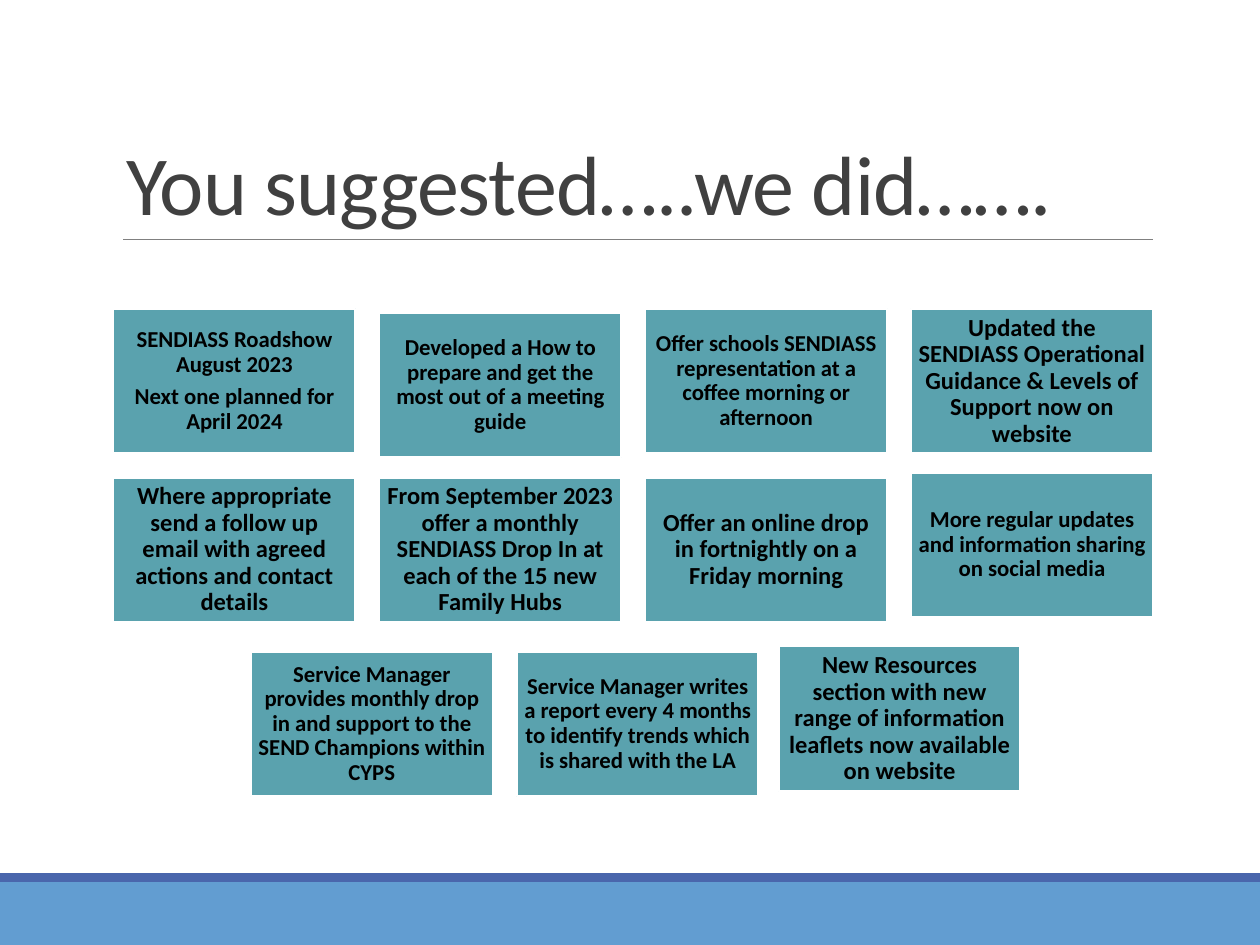
from dataclasses import dataclass

from lxml.etree import SubElement
from pptx import Presentation
from pptx.dml.color import RGBColor
from pptx.enum.shapes import MSO_CONNECTOR, MSO_SHAPE
from pptx.enum.text import MSO_ANCHOR, MSO_AUTO_SIZE, PP_ALIGN
from pptx.oxml.ns import qn
from pptx.util import Inches, Pt


@dataclass(frozen=True)
class Theme:
    font: str = "Calibri"
    title: str = "404040"
    text: str = "000000"
    card: str = "5AA2AE"
    edge: str = "FFFFFF"
    rule: str = "808080"
    band: str = "629DD1"
    stripe: str = "4A66AC"
    title_size: int = 48
    small: int = 13
    large: int = 14


THEME = Theme()
CARD_W, CARD_H = 1.92, 1.15
STEP_X, STEP_Y = 2.11, 1.34
TOP = 2.45

ROWS = [
    (0.9, [
        ("SENDIASS Roadshow August 2023\nNext one planned for April 2024", THEME.small, 0, 0),
        ("Developed a How to prepare and get the most out of a meeting guide", THEME.small, 0, 0.03),
        ("Offer schools SENDIASS representation at a coffee morning or afternoon", THEME.small, 0, 0),
        ("Updated the SENDIASS Operational Guidance & Levels of Support now on website", THEME.large, 0, 0),
    ]),
    (0.9, [
        ("Where appropriate send a follow up email with agreed actions and contact details", THEME.large, 0, 0),
        ("From September 2023 offer a monthly SENDIASS Drop In at each of the 15 new Family Hubs",
         THEME.large, 0, 0),
        ("Offer an online drop in fortnightly on a Friday morning", THEME.large, 0, 0),
        ("More regular updates and information sharing on social media", THEME.small, 0, -0.04),
    ]),
    (1.99, [
        ("Service Manager provides monthly drop in and support to the SEND Champions within CYPS",
         THEME.small, 0, 0.04),
        ("Service Manager writes a report every 4 months to identify trends which is shared with the LA",
         THEME.small, 0, 0.04),
        ("New Resources section with new range of information leaflets now available on website",
         THEME.large, -0.03, 0),
    ]),
]


def rgb(value):
    return RGBColor.from_string(value)


def style_font(font, size, color, bold=False):
    font.name = THEME.font
    font.size = Pt(size)
    font.bold = bold
    font.color.rgb = rgb(color)


def add_rect(slide, left, top, width, height, fill):
    sp = slide.shapes.add_shape(MSO_SHAPE.RECTANGLE, Inches(left), Inches(top), Inches(width), Inches(height))
    sp.shadow.inherit = False
    sp.fill.solid()
    sp.fill.fore_color.rgb = rgb(fill)
    sp.line.fill.background()
    return sp


def add_rule(slide, left, right, top):
    line = slide.shapes.add_connector(
        MSO_CONNECTOR.STRAIGHT, Inches(left), Inches(top), Inches(right), Inches(top))
    line.line.color.rgb = rgb(THEME.rule)
    line.line.width = Pt(0.5)
    SubElement(line._element.spPr, qn("a:effectLst"))


def set_title(slide, text):
    sp = slide.shapes.title
    sp.left, sp.top, sp.width, sp.height = Inches(0.9), Inches(0.31), Inches(8.25), Inches(1.59)
    tf = sp.text_frame
    tf.text = text
    tf.word_wrap = True
    tf.auto_size = MSO_AUTO_SIZE.NONE
    tf.vertical_anchor = MSO_ANCHOR.BOTTOM
    p = tf.paragraphs[0]
    p.alignment = PP_ALIGN.LEFT
    p.line_spacing = 0.85
    style_font(p.font, THEME.title_size, THEME.title)
    p.runs[0]._r.get_or_add_rPr().set("spc", "-50")


def add_card(slide, left, top, text, size):
    sp = add_rect(slide, left, top, CARD_W, CARD_H, THEME.card)
    sp.line.color.rgb = rgb(THEME.edge)
    sp.line.width = Pt(1.25)
    tf = sp.text_frame
    tf.text = text
    tf.word_wrap = True
    tf.vertical_anchor = MSO_ANCHOR.MIDDLE
    inset = Inches(0.05 if size == THEME.small else 0.06)
    tf.margin_left = tf.margin_right = tf.margin_top = tf.margin_bottom = inset
    for p in tf.paragraphs:
        p.alignment = PP_ALIGN.CENTER
        p.line_spacing = 0.9
        p.space_after = Pt(round(size * 0.35, 1))
        style_font(p.font, size, THEME.text, bold=True)


def main():
    prs = Presentation()
    prs.slide_width, prs.slide_height = Inches(10), Inches(7.5)
    slide = prs.slides.add_slide(prs.slide_layouts[5])
    add_rect(slide, 0, 7, 10, 0.5, THEME.band)
    add_rect(slide, 0, 6.93, 10, 0.07, THEME.stripe)
    add_rule(slide, 0.98, 9.15, 1.9)
    set_title(slide, "You suggested…..we did…….")
    for row, (left, cards) in enumerate(ROWS):
        for col, (text, size, dx, dy) in enumerate(cards):
            add_card(slide, left + col * STEP_X + dx, TOP + row * STEP_Y + dy, text, size)
    prs.save("out.pptx")


if __name__ == "__main__":
    main()
